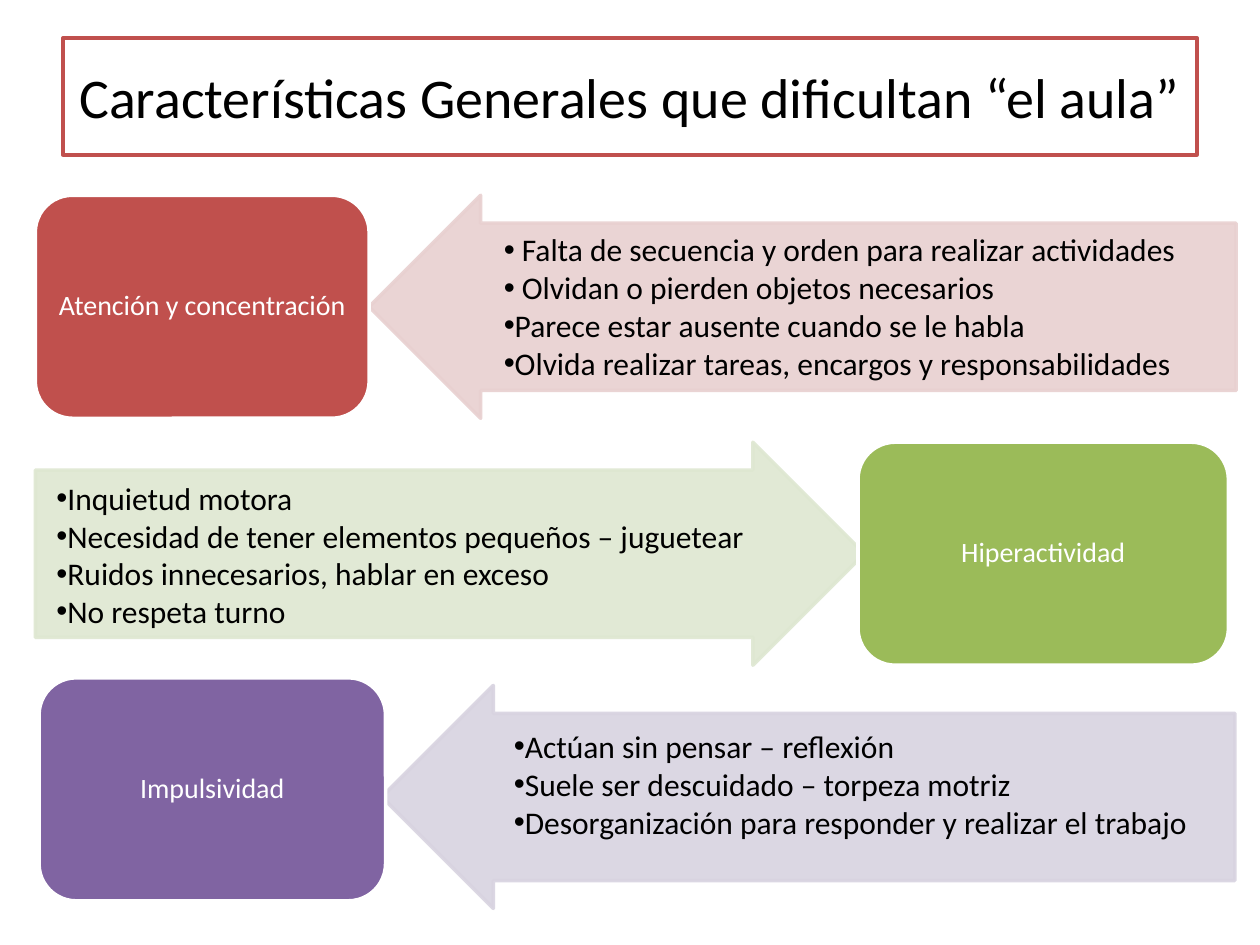
from dataclasses import dataclass

from lxml import etree
from pptx import Presentation
from pptx import util as u
from pptx.dml.color import RGBColor
from pptx.enum import shapes, text
from pptx.oxml.ns import qn


@dataclass(frozen=True)
class Theme:
    font: str = "Calibri"
    ink: str = "000000"
    paper: str = "FFFFFF"
    red: str = "C0504D"
    pale_red: str = "E8D0D0"
    green: str = "9BBB59"
    pale_green: str = "DEE7D1"
    purple: str = "8064A2"
    pale_purple: str = "D8D3E0"
    title_size: int = 32
    label_size: int = 16
    note_size: int = 18
    outline: int = 2
    arrow_opacity: int = 90


def assign(target, values):
    for name, value in values.items():
        setattr(target, name, value)


class PageBuilder:
    """Draw styled elements on the current slide."""

    def __init__(self, page, theme):
        self.page = page
        self.theme = theme

    def place(self, shape, area):
        names = ("left", "top", "width", "height")
        assign(shape, {name: u.Inches(value) for name, value in zip(names, area)})

    def paint(self, shape, fill, line):
        shape.fill.solid()
        shape.fill.fore_color.rgb = RGBColor.from_string(fill)
        shape.line.color.rgb = RGBColor.from_string(line)
        shape.line.width = u.Pt(self.theme.outline)

    def add_words(self, para, words, size, color, **layout):
        span = para.add_run()
        span.text = words
        assign(span.font, {"name": self.theme.font, "size": u.Pt(size)})
        span.font.color.rgb = RGBColor.from_string(color)
        assign(para, layout)

    def shape(self, kind, area, fill, line):
        box = self.page.shapes.add_shape(kind, *map(u.Inches, area))
        box.shadow.inherit = False
        self.paint(box, fill, line)
        return box

    def title(self, area, words):
        box = self.page.shapes.title
        self.place(box, area)
        self.paint(box, self.theme.paper, self.theme.red)
        assign(box.text_frame, {
            "word_wrap": True,
            "auto_size": text.MSO_AUTO_SIZE.NONE,
            "vertical_anchor": text.MSO_ANCHOR.MIDDLE,
        })
        self.add_words(box.text_frame.paragraphs[0], words, self.theme.title_size,
                       self.theme.ink, alignment=text.PP_ALIGN.CENTER)

    def arrow(self, area, color, rotation):
        arrow = self.shape(shapes.MSO_SHAPE.RIGHT_ARROW, area, color, color)
        arrow.rotation = rotation
        arrow.adjustments[0] = 0.75
        arrow.adjustments[1] = 0.5
        for tint in arrow._element.spPr.iter(qn("a:srgbClr")):
            etree.SubElement(tint, qn("a:alpha"), val=str(self.theme.arrow_opacity * 1000))

    def label(self, area, words, color):
        box = self.shape(shapes.MSO_SHAPE.ROUNDED_RECTANGLE, area, color, self.theme.paper)
        assign(box.text_frame, {
            "word_wrap": True,
            "vertical_anchor": text.MSO_ANCHOR.MIDDLE,
            "margin_left": 0,
            "margin_right": 0,
        })
        self.add_words(box.text_frame.paragraphs[0], words, self.theme.label_size,
                       self.theme.paper, alignment=text.PP_ALIGN.CENTER, line_spacing=0.9)

    def notes(self, area, lines):
        frame = self.page.shapes.add_textbox(*map(u.Inches, area)).text_frame
        frame.word_wrap = True
        for index, words in enumerate(lines):
            para = frame.add_paragraph() if index else frame.paragraphs[0]
            self.add_words(para, words, self.theme.note_size, self.theme.ink)
            properties = para._p.get_or_add_pPr()
            etree.SubElement(properties, qn("a:buFont"), typeface="Arial")
            etree.SubElement(properties, qn("a:buChar"), char="•")


def main():
    theme = Theme()
    deck = Presentation()
    assign(deck, {"slide_width": u.Inches(10), "slide_height": u.Inches(7.5)})
    builder = PageBuilder(deck.slides.add_slide(deck.slide_layouts[5]), theme)
    builder.title((0.5, 0.3, 9, 0.93), "Características Generales que dificultan “el aula”")

    height = 1.77
    rows = [
        {
            "label": ("Atención y concentración", theme.red, (0.28, 1.55, 2.65, height)),
            "arrow": (theme.pale_red, 180, (2.93, 1.55, 6.88, height)),
            "area": (3.9, 1.78, 5.83, 1.62),
            "notes": (
                " Falta de secuencia y orden para realizar actividades",
                " Olvidan o pierden objetos necesarios",
                "Parece estar ausente cuando se le habla",
                "Olvida realizar tareas, encargos y responsabilidades",
            ),
        },
        {
            "label": ("Hiperactividad", theme.green, (6.81, 3.51, 2.94, height)),
            "arrow": (theme.pale_green, 0, (0.28, 3.51, 6.58, height)),
            "area": (0.35, 3.75, 5.83, 2.22),
            "notes": (
                "Inquietud motora",
                "Necesidad de tener elementos pequeños – juguetear",
                "Ruidos innecesarios, hablar en exceso",
                "No respeta turno",
            ),
        },
        {
            "label": ("Impulsividad", theme.purple, (0.31, 5.38, 2.75, height)),
            "arrow": (theme.pale_purple, 180, (3.03, 5.44, 6.77, height)),
            "area": (3.98, 5.72, 5.75, 1.01),
            "notes": (
                "Actúan sin pensar – reflexión",
                "Suele ser descuidado – torpeza motriz",
                "Desorganización para responder y realizar el trabajo",
            ),
        },
    ]
    for row in rows:
        color, rotation, area = row["arrow"]
        builder.arrow(area, color, rotation)
        words, color, area = row["label"]
        builder.label(area, words, color)
        builder.notes(row["area"], row["notes"])

    deck.save("out.pptx")


if __name__ == "__main__":
    main()
